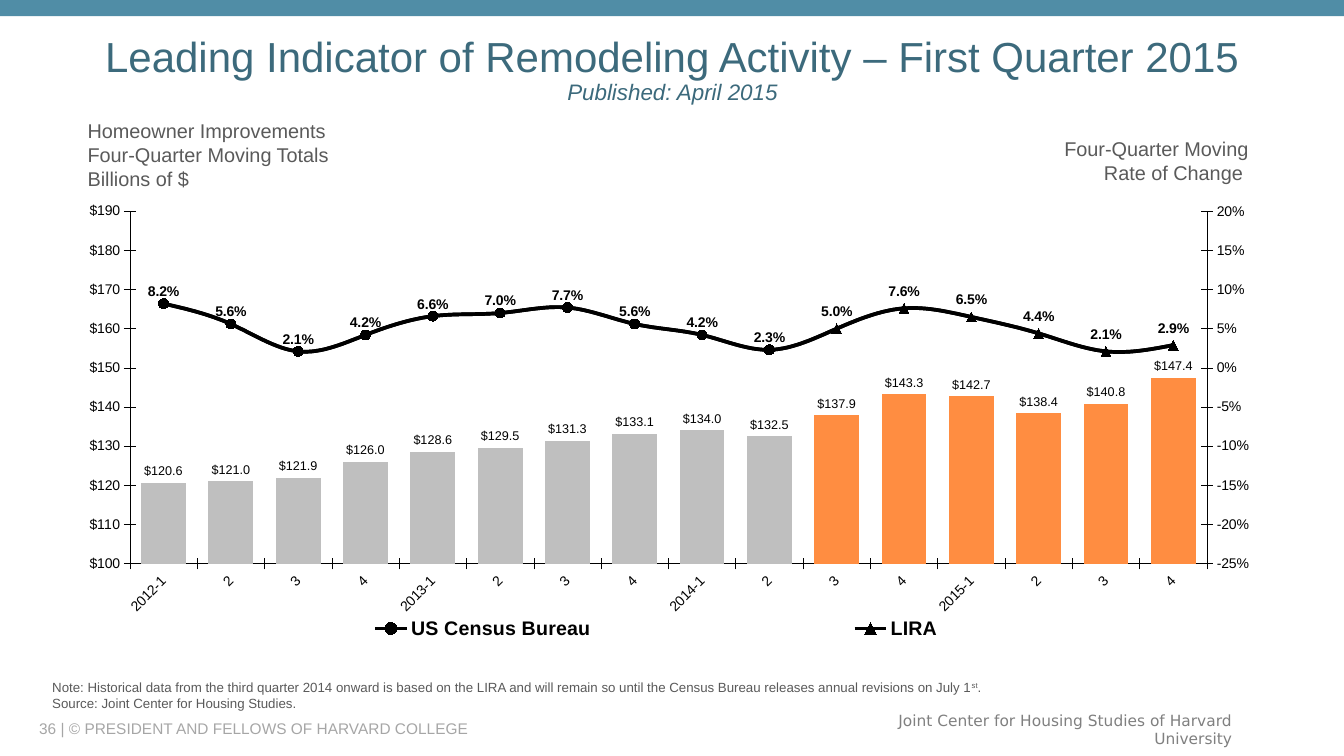
from copy import deepcopy

from lxml import etree
from pptx import Presentation
from pptx.chart.axis import ValueAxis
from pptx.chart.data import CategoryChartData
from pptx.dml.color import RGBColor
from pptx.enum.chart import (XL_CHART_TYPE, XL_LABEL_POSITION, XL_LEGEND_POSITION,
                             XL_MARKER_STYLE, XL_TICK_MARK)
from pptx.enum.shapes import MSO_SHAPE
from pptx.enum.text import MSO_ANCHOR, PP_ALIGN
from pptx.oxml.ns import qn
from pptx.util import Inches, Pt

LEFT, CENTER, RIGHT = PP_ALIGN.LEFT, PP_ALIGN.CENTER, PP_ALIGN.RIGHT
TOP, MIDDLE = MSO_ANCHOR.TOP, MSO_ANCHOR.MIDDLE
CIRCLE, TRIANGLE, NO_MARKER = XL_MARKER_STYLE.CIRCLE, XL_MARKER_STYLE.TRIANGLE, XL_MARKER_STYLE.NONE
CROSS, NO_TICK = XL_TICK_MARK.CROSS, XL_TICK_MARK.NONE
OUTSIDE_END, ABOVE = XL_LABEL_POSITION.OUTSIDE_END, XL_LABEL_POSITION.ABOVE

COLORS = {"band": "508DA6", "title": "3C6A7C", "text": "5A5A5A", "footer": "A6A6A6",
          "center": "808080", "census": "BFBFBF", "lira": "FF8D41", "black": "000000"}

FIRST_LIRA = 10
QUARTERS = ["2012-1", "2", "3", "4", "2013-1", "2", "3", "4",
            "2014-1", "2", "3", "4", "2015-1", "2", "3", "4"]
TOTALS = [120.6, 121.0, 121.9, 126.0, 128.6, 129.5, 131.3, 133.1,
          134.0, 132.5, 137.9, 143.3, 142.7, 138.4, 140.8, 147.4]
RATES = [0.082, 0.056, 0.021, 0.042, 0.066, 0.070, 0.077, 0.056,
         0.042, 0.023, 0.050, 0.076, 0.065, 0.044, 0.021, 0.029]


def color(name):
    return RGBColor.from_string(COLORS[name])


def style_font(font, size, color_name, bold=False, name="Arial"):
    font.size = Pt(size)
    font.name = name
    font.bold = bold
    font.color.rgb = color(color_name)


def fill_solid(fill, color_name):
    fill.solid()
    fill.fore_color.rgb = color(color_name)


def add_text(slide, box, lines, size, color_name, align=LEFT, anchor=TOP, font_name="Arial"):
    frame = slide.shapes.add_textbox(*map(Inches, box)).text_frame
    frame.word_wrap = True
    frame.vertical_anchor = anchor
    for index, line in enumerate(lines):
        paragraph = frame.paragraphs[0] if index == 0 else frame.add_paragraph()
        paragraph.alignment = align
        style_font(paragraph.font, size, color_name, name=font_name)
        paragraph.add_run().text = line
    return frame


def add_band(slide):
    band = slide.shapes.add_shape(MSO_SHAPE.RECTANGLE, 0, 0, Inches(13.33), Inches(0.16))
    band.shadow.inherit = False
    fill_solid(band.fill, "band")
    band.line.fill.background()


def add_title(slide):
    frame = add_text(slide, (0.56, 0.33, 12.22, 0.75),
                     ["Leading Indicator of Remodeling Activity – First Quarter 2015"],
                     30, "title", CENTER, MIDDLE)
    paragraph = frame.paragraphs[0]
    paragraph.line_spacing = 0.9
    paragraph.add_line_break()
    published = paragraph.add_run()
    published.text = "Published: April 2015"
    published.font.size = Pt(16)
    published.font.italic = True


def add_note(slide):
    frame = add_text(slide, (0.42, 6.69, 11.46, 0.42),
                     ["Note: Historical data from the third quarter 2014 onward is based on the LIRA and "
                      "will remain so until the Census Bureau releases annual revisions on July 1",
                      "Source: Joint Center for Housing Studies."], 9.5, "text")
    ordinal = frame.paragraphs[0].add_run()
    ordinal.text = "st"
    ordinal.font._element.set("baseline", "30000")
    frame.paragraphs[0].add_run().text = "."


def add_element(parent, tag, value=None):
    element = etree.SubElement(parent, qn(tag))
    if value is not None:
        element.set("val", str(value))
    return element


def remove_children(parent, tag):
    for child in parent.findall(qn(tag)):
        parent.remove(child)


def set_layout(parent, position, box, inner=False):
    remove_children(parent, "c:layout")
    layout = add_element(parent, "c:layout")
    manual = add_element(layout, "c:manualLayout")
    if inner:
        add_element(manual, "c:layoutTarget", "inner")
    for key in ("xMode", "yMode"):
        add_element(manual, "c:" + key, "edge")
    for key, value in zip("xywh", box):
        add_element(manual, "c:" + key, value)
    parent.insert(position, layout)


def style_axis(axis):
    axis.has_major_gridlines = False
    axis.major_tick_mark = CROSS
    axis.minor_tick_mark = NO_TICK
    axis.format.line.width = Pt(0.33)
    axis.format.line.color.rgb = color("black")
    style_font(axis.tick_labels.font, 10, "black")


def scale_axis(axis, low, high, step, number_format):
    axis.minimum_scale, axis.maximum_scale, axis.major_unit = low, high, step
    axis.tick_labels.number_format = number_format
    axis.tick_labels.number_format_is_linked = False


def move_rates_to_right_axis(chart):
    plot_area = chart._chartSpace.chart.plotArea
    bars = plot_area.find(qn("c:barChart"))
    line_chart = add_element(plot_area, "c:lineChart")
    bars.addnext(line_chart)
    add_element(line_chart, "c:grouping", "standard")
    add_element(line_chart, "c:varyColors", 0)
    for series in bars.findall(qn("c:ser"))[1:]:
        remove_children(series, "c:invertIfNegative")
        line_chart.append(series)
    add_element(line_chart, "c:marker", 1)

    category = deepcopy(chart.category_axis._element)
    value = deepcopy(chart.value_axis._element)
    for axis, own, other in ((category, 5001, 5002), (value, 5002, 5001)):
        add_element(line_chart, "c:axId", own)
        axis.find(qn("c:axId")).set("val", str(own))
        axis.find(qn("c:crossAx")).set("val", str(other))
    category.find(qn("c:delete")).set("val", "1")
    value.find(qn("c:axPos")).set("val", "r")
    value.find(qn("c:crosses")).set("val", "max")
    chart.value_axis._element.addnext(category)
    category.addnext(value)
    scale_axis(ValueAxis(value), -0.25, 0.2, 0.05, "0%")


def label_series(series, number_format, size, position, bold=False):
    labels = series.data_labels
    labels.show_value = True
    labels.number_format = number_format
    labels.number_format_is_linked = False
    labels.position = position
    style_font(labels.font, size, "black", bold)


def style_stroke(line):
    line.width = Pt(2.64)
    line.color.rgb = color("black")


def style_line(series, marker_style, unmarked):
    series.smooth = True
    style_stroke(series.format.line)
    series.marker.style = marker_style
    series.marker.size = 7
    fill_solid(series.marker.format.fill, "black")
    series.marker.format.line.color.rgb = color("black")
    for index in unmarked:
        point = series.points[index]
        point.marker.style = NO_MARKER
        style_stroke(point.format.line)


def add_legend(chart):
    chart.has_legend = True
    legend = chart.legend
    legend.position = XL_LEGEND_POSITION.BOTTOM
    legend.include_in_layout = False
    style_font(legend.font, 14, "black", bold=True)
    set_layout(legend._element, 1, (0.05, 0.92, 0.88, 0.08))
    entry = add_element(legend._element, "c:legendEntry")
    add_element(entry, "c:idx", 0)
    add_element(entry, "c:delete", 1)
    legend._element.insert(1, entry)


def add_remodeling_chart(slide):
    data = CategoryChartData()
    data.categories = QUARTERS
    for name, values in (("Series 1", TOTALS), ("US Census Bureau", RATES), ("LIRA", RATES)):
        data.add_series(name, values)
    box = map(Inches, (0.56, 1.82, 12.14, 4.6))
    chart = slide.shapes.add_chart(XL_CHART_TYPE.COLUMN_CLUSTERED, *box, data).chart
    chart.has_title = False
    style_font(chart.font, 13.2, "black")
    style_axis(chart.category_axis)
    chart.category_axis._element.find(qn("c:txPr")).find(qn("a:bodyPr")).set("rot", "-2700000")
    style_axis(chart.value_axis)
    scale_axis(chart.value_axis, 100, 190, 10, "\\$#,##0")
    move_rates_to_right_axis(chart)
    set_layout(chart._chartSpace.chart.plotArea, 0, (0.06, 0.06, 0.88, 0.76), inner=True)

    bars, lines = chart.plots
    bars.gap_width = 50
    bars.vary_by_categories = False
    totals = bars.series[0]
    fill_solid(totals.format.fill, "census")
    for index in range(FIRST_LIRA, len(QUARTERS)):
        fill_solid(totals.points[index].format.fill, "lira")
    label_series(totals, "\\$#,##0.0", 9, OUTSIDE_END)
    census, lira = lines.series
    style_line(census, CIRCLE, range(FIRST_LIRA, len(QUARTERS)))
    style_line(lira, TRIANGLE, range(FIRST_LIRA))
    label_series(lira, "0.0%", 10, ABOVE, bold=True)
    add_legend(chart)


def main():
    presentation = Presentation()
    presentation.slide_width, presentation.slide_height = Inches(13.33), Inches(7.5)
    slide = presentation.slides.add_slide(presentation.slide_layouts[6])
    add_text(slide, (0.29, 7.13, 7.92, 0.2), ["36 | © PRESIDENT AND FELLOWS OF HARVARD COLLEGE"],
             11, "footer", anchor=MIDDLE)
    add_text(slide, (8.42, 7.09, 3.9, 0.29), ["Joint Center for Housing Studies of Harvard University"],
             11, "center", RIGHT, MIDDLE, "DejaVu Sans")
    add_band(slide)
    add_title(slide)
    add_text(slide, (0.77, 1.13, 3.83, 0.82),
             ["Homeowner Improvements", "Four-Quarter Moving Totals", "Billions of $"], 14.2, "text")
    add_text(slide, (8.42, 1.31, 4.06, 0.58), ["Four-Quarter Moving", "Rate of Change "],
             14.2, "text", RIGHT)
    add_remodeling_chart(slide)
    add_note(slide)
    presentation.save("out.pptx")


if __name__ == "__main__":
    main()
